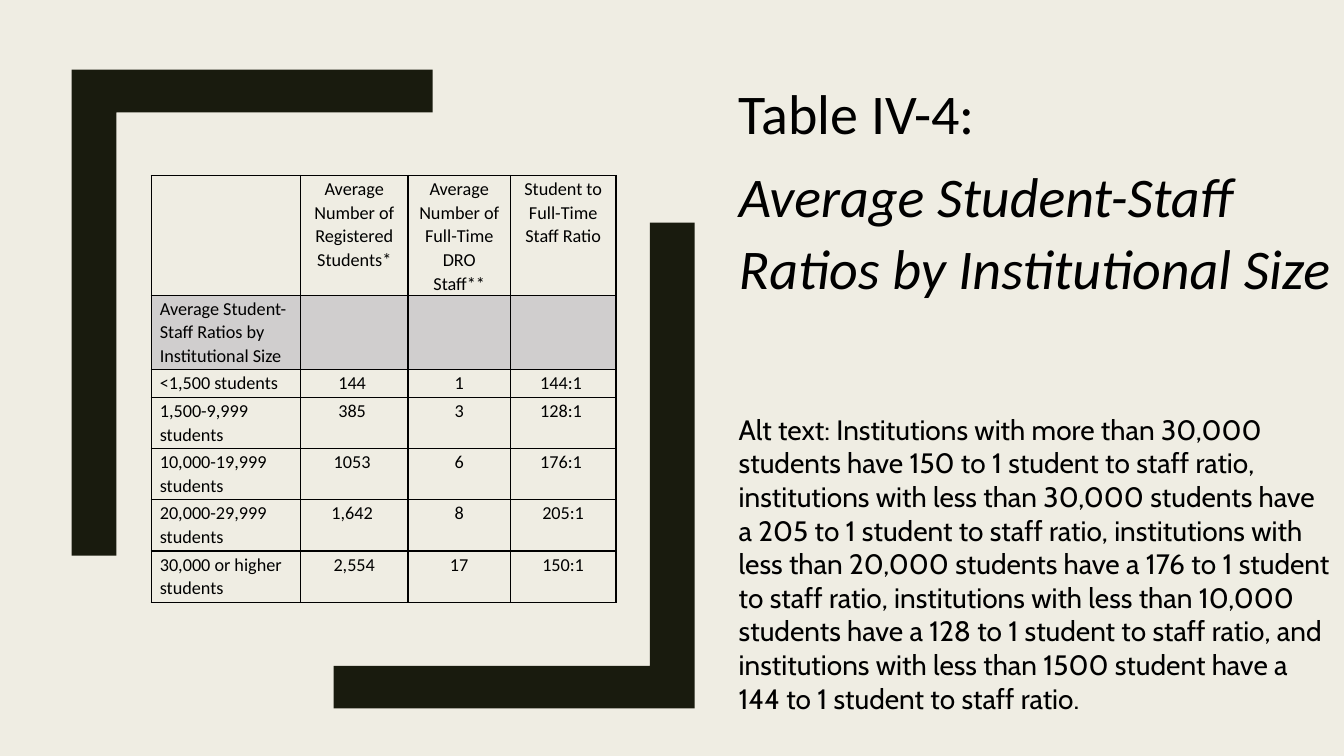
import pptx
import pptx.util
import pptx.dml.color
import pptx.enum.text
import pptx.oxml
import pptx.oxml.ns

Pt = pptx.util.Pt
ALIGN = pptx.enum.text.PP_ALIGN
ANCHOR = pptx.enum.text.MSO_ANCHOR

PAPER, INK, BLACK, BAND = "EFEDE3", "191B0E", "000000", "D0CECE"
COLUMN_WIDTHS = [106.5, 77, 73, 75.5]
ROW_HEIGHTS = [85, 52.8, 20.2] + [36.6] * 4
RATIO_ROWS = [
    ["", "Average Number of Registered Students*",
     "Average Number of Full-Time DRO Staff**", "Student to Full-Time Staff Ratio"],
    ["Average Student-Staff Ratios by Institutional Size", "", "", ""],
    ["<1,500 students", "144 ", "1", "144:1 "],
    ["1,500-9,999 students", "385 ", "3", "128:1 "],
    ["10,000-19,999 students", "1053 ", "6", "176:1 "],
    ["20,000-29,999 students", "1,642 ", "8", "205:1"],
    ["30,000 or higher students", "2,554", "17", "150:1"],
]
SUMMARY = (
    "Alt text: Institutions with more than 30,000 students have 150 to 1 student to staff "
    "ratio, institutions with less than 30,000 students have a 205 to 1 student to staff "
    "ratio, institutions with less than 20,000 students have a 176 to 1 student to staff "
    "ratio, institutions with less than 10,000 students have a 128 to 1 student to staff "
    "ratio, and institutions with less than 1500 student have a 144 to 1 student to staff ratio."
)


def paint(target, color):
    """Give a fill or a font a solid hex colour."""
    if hasattr(target, "solid"):
        target.solid()
        target.fore_color.rgb = pptx.dml.color.RGBColor.from_string(color)
    else:
        target.color.rgb = pptx.dml.color.RGBColor.from_string(color)


def style(paragraph, face, size, align=ALIGN.LEFT):
    """Set the face, size, colour and alignment of a paragraph."""
    paragraph.font.name = face
    paragraph.font.size = Pt(size)
    paint(paragraph.font, BLACK)
    paragraph.alignment = align


def space(paragraph):
    """Apply the spacing shared by the title and the table."""
    paragraph.line_spacing = 1.07
    paragraph.space_after = Pt(8)


def add_heading(slide, left, top, width, height):
    """Place the title and its italic subtitle in the given box."""
    title = slide.shapes.title
    title.left, title.top, title.width, title.height = map(Pt, (left, top, width, height))
    frame = title.text_frame
    frame.word_wrap = True
    frame.auto_size = pptx.enum.text.MSO_AUTO_SIZE.NONE
    frame.vertical_anchor = ANCHOR.BOTTOM
    frame.margin_bottom = Pt(53)
    frame.text = "Table IV-4:\nAverage Student-Staff Ratios by Institutional Size"
    for paragraph in frame.paragraphs:
        style(paragraph, "Calibri", 40)
        space(paragraph)
    frame.paragraphs[1].font.italic = True


def add_bracket(slide, left, top, width, height, turned=False):
    """Draw a corner bracket at the top left of a box, or turned to its bottom right."""
    upright, beam = 32, 30.4
    outline = [(0, 0), (width, 0), (width, beam), (upright, beam), (upright, height), (0, height)]
    if turned:
        outline = [(width - x, height - y) for x, y in outline]
    corners = [(Pt(left + x), Pt(top + y)) for x, y in outline]
    builder = slide.shapes.build_freeform(*corners[0])
    builder.add_line_segments(corners[1:], close=True)
    bracket = builder.convert_to_shape()
    bracket.shadow.inherit = False
    paint(bracket.fill, INK)
    bracket.line.fill.background()


def add_borders(cell):
    """Rule all four sides of a cell in thin black."""
    properties = cell._tc.get_or_add_tcPr()
    for position, side in enumerate(("lnL", "lnR", "lnT", "lnB")):
        properties.insert(position, pptx.oxml.parse_xml(
            f'<a:{side} {pptx.oxml.ns.nsdecls("a")} w="{Pt(1)}"><a:solidFill>'
            f'<a:srgbClr val="{BLACK}"/></a:solidFill></a:{side}>'))


def add_ratio_table(slide, left, top):
    """Place the table of student-staff ratios with its corner at the given point."""
    ratios = slide.shapes.add_table(
        len(ROW_HEIGHTS), len(COLUMN_WIDTHS), Pt(left), Pt(top),
        Pt(sum(COLUMN_WIDTHS)), Pt(sum(ROW_HEIGHTS))).table
    ratios.first_row = ratios.horz_banding = False
    for column, width in zip(ratios.columns, COLUMN_WIDTHS):
        column.width = Pt(width)
    for row, height in zip(ratios.rows, ROW_HEIGHTS):
        row.height = Pt(height)
    for r, entries in enumerate(RATIO_ROWS):
        for c, entry in enumerate(entries):
            cell = ratios.cell(r, c)
            cell.text = entry
            cell.margin_left = cell.margin_right = Pt(6.2)
            cell.margin_top, cell.margin_bottom = Pt(0.8), Pt(0)
            paragraph = cell.text_frame.paragraphs[0]
            style(paragraph, "Calibri", 13, ALIGN.CENTER if c else ALIGN.LEFT)
            space(paragraph)
            if r == 1:
                paint(cell.fill, BAND)
            else:
                cell.fill.background()
            add_borders(cell)


def add_summary(slide, left, top, width, height):
    """Place the written summary of the table in the given box."""
    summary = slide.shapes.add_textbox(*map(Pt, (left, top, width, height))).text_frame
    summary.word_wrap = True
    summary.text = SUMMARY
    style(summary.paragraphs[0], "Cabin", 20)


def main():
    """Build the slide and save it."""
    deck = pptx.Presentation()
    deck.slide_width, deck.slide_height = Pt(960), Pt(540)
    slide = deck.slides.add_slide(deck.slide_layouts[5])
    paint(slide.background.fill, PAPER)
    add_heading(slide, 520.6, 12.2, 439.2, 255.6)
    add_bracket(slide, 238.4, 159, 257.8, 347, turned=True)
    add_bracket(slide, 51.2, 49.8, 257.8, 347)
    add_ratio_table(slide, 108, 125.3)
    add_summary(slide, 520.6, 290.9, 439.2, 225.4)
    deck.save("out.pptx")


if __name__ == "__main__":
    main()
